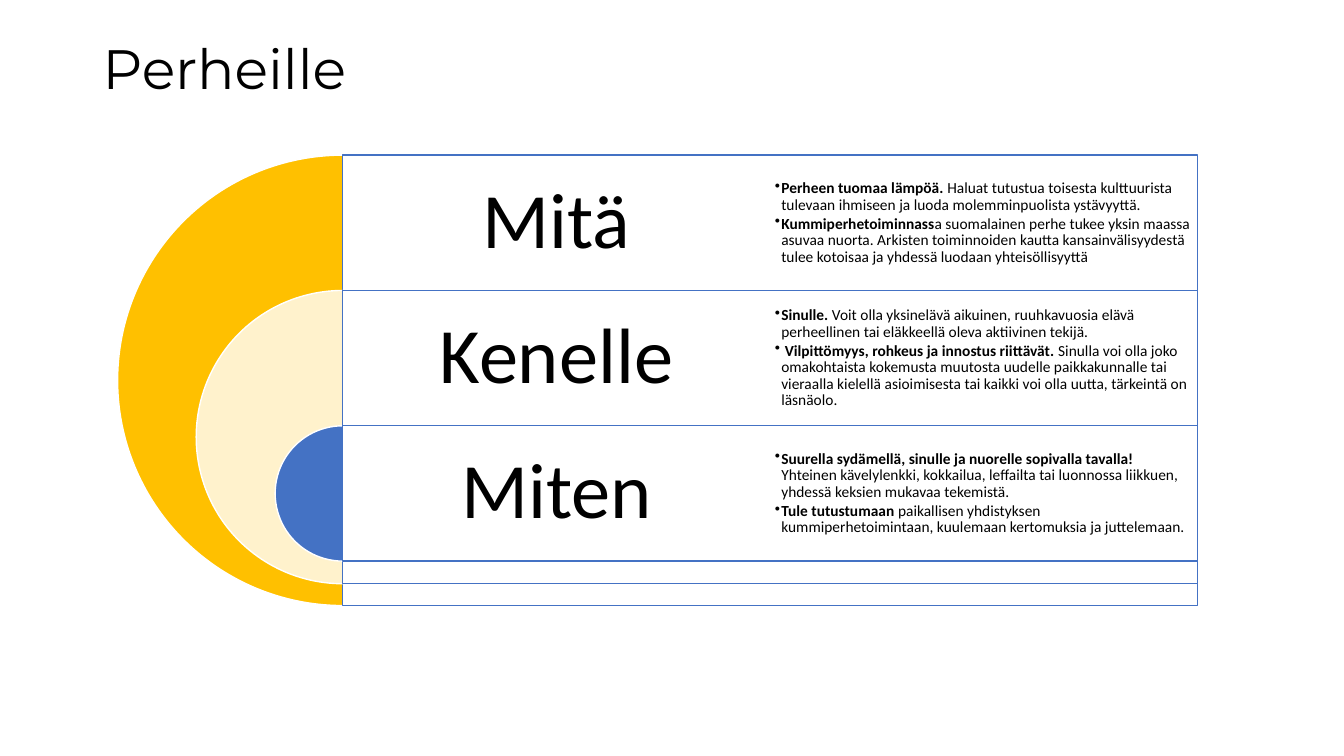
from lxml import etree
from pptx import Presentation
from pptx.dml.color import RGBColor
from pptx.enum.shapes import MSO_SHAPE
from pptx.enum.text import MSO_ANCHOR, PP_ALIGN
from pptx.oxml.ns import qn
from pptx.util import Cm, Pt

PIE, RECT = MSO_SHAPE.PIE, MSO_SHAPE.RECTANGLE
MIDDLE, CENTER = MSO_ANCHOR.MIDDLE, PP_ALIGN.CENTER

BLACK = RGBColor(0x00, 0x00, 0x00)
WHITE = RGBColor(0xFF, 0xFF, 0xFF)
GOLD = RGBColor(0xFF, 0xC0, 0x00)
CREAM = RGBColor(0xFF, 0xF2, 0xCC)
BLUE = RGBColor(0x44, 0x72, 0xC4)

AXIS = 8.64
TOP = 3.91
ROW = 3.41
HALF = 10.77

# Heading, pie colour, pie diameter, bullets as (bold text, plain text)
BANDS = [
    ("Mitä", GOLD, 11.35, [
        ("Perheen tuomaa lämpöä.",
         " Haluat tutustua toisesta kulttuurista tulevaan ihmiseen ja luoda "
         "molemminpuolista ystävyyttä."),
        ("Kummiperhetoiminnass",
         "a suomalainen perhe tukee yksin maassa asuvaa nuorta. Arkisten "
         "toiminnoiden kautta kansainvälisyydestä tulee kotoisaa ja yhdessä "
         "luodaan yhteisöllisyyttä"),
    ]),
    ("Kenelle", CREAM, 7.39, [
        ("Sinulle.",
         " Voit olla yksinelävä aikuinen, ruuhkavuosia elävä perheellinen tai "
         "eläkkeellä oleva aktiivinen tekijä."),
        (" Vilpittömyys, rohkeus ja innostus riittävät. ",
         "Sinulla voi olla joko omakohtaista kokemusta muutosta uudelle "
         "paikkakunnalle tai vieraalla kielellä asioimisesta tai kaikki voi "
         "olla uutta, tärkeintä on läsnäolo."),
    ]),
    ("Miten", BLUE, ROW, [
        ("Suurella sydämellä, sinulle ja nuorelle sopivalla tavalla!",
         " Yhteinen kävelylenkki, kokkailua, leffailta tai luonnossa liikkuen, "
         "yhdessä keksien mukavaa tekemistä."),
        ("Tule tutustumaan ",
         "paikallisen yhdistyksen kummiperhetoimintaan, kuulemaan kertomuksia "
         "ja juttelemaan."),
    ]),
]


def add_form(slide, kind, left, top, width, height, fill, line):
    form = slide.shapes.add_shape(kind, Cm(left), Cm(top), Cm(width), Cm(height))
    form.shadow.inherit = False
    form.fill.solid()
    form.fill.fore_color.rgb = fill
    form.line.color.rgb = line
    form.line.width = Pt(1)
    return form


def add_pie(slide, top, size, fill):
    """Draw the left half of a disc whose flat side lies on the axis."""
    pie = add_form(slide, PIE, AXIS - size / 2, top, size, size, fill, WHITE)
    pie.adjustments[0] = 54
    pie.adjustments[1] = 162


def add_panel(slide, top, height):
    panel = add_form(slide, RECT, AXIS, top, 2 * HALF, height, WHITE, BLUE)
    color = panel.fill._xPr.find(".//" + qn("a:srgbClr"))
    etree.SubElement(color, qn("a:alpha")).set("val", "90000")


def add_box(slide, left, top, width, height, inset):
    box = slide.shapes.add_textbox(Cm(left), Cm(top), Cm(width), Cm(height))
    frame = box.text_frame
    frame.word_wrap = True
    frame.vertical_anchor = MIDDLE
    frame.margin_left = frame.margin_right = Cm(inset)
    frame.margin_top = frame.margin_bottom = Cm(min(inset, 0.58))
    return frame


def style(para, size, name="Calibri"):
    para.line_spacing = 0.9
    para.font.size = Pt(size)
    para.font.name = name
    para.font.color.rgb = BLACK


def add_title(slide, text):
    frame = add_box(slide, 2.34, 1.02, 29.21, 1.55, 0.25)
    frame.text = text
    style(frame.paragraphs[0], 39.6, "Montserrat")


def add_head(slide, top, text):
    frame = add_box(slide, AXIS, top, HALF, ROW, 0.58)
    frame.text = text
    para = frame.paragraphs[0]
    para.alignment = CENTER
    style(para, 56)


def add_bullet(para):
    props = para._p.get_or_add_pPr()
    props.set("marL", str(Cm(0.16)))
    props.set("indent", str(-Cm(0.16)))
    etree.SubElement(props, qn("a:buChar")).set("char", "•")


def add_list(slide, top, items):
    frame = add_box(slide, AXIS + HALF, top, HALF, ROW, 0.12)
    for i, (lead, rest) in enumerate(items):
        para = frame.add_paragraph() if i else frame.paragraphs[0]
        para.level = 1
        add_bullet(para)
        style(para, 11)
        para.space_after = Pt(1.7)
        for text, bold in ((lead, True), (rest, False)):
            run = para.add_run()
            run.text = text
            run.font.bold = bold


def main():
    deck = Presentation()
    deck.slide_width, deck.slide_height = Cm(33.87), Cm(19.05)
    slide = deck.slides.add_slide(deck.slide_layouts[6])
    add_title(slide, "Perheille")
    for i, (head, color, size, items) in enumerate(BANDS):
        top = TOP + i * ROW
        add_pie(slide, top, size, color)
        add_panel(slide, top, size)
        add_head(slide, top, head)
        add_list(slide, top, items)
    deck.save("out.pptx")


if __name__ == "__main__":
    main()
